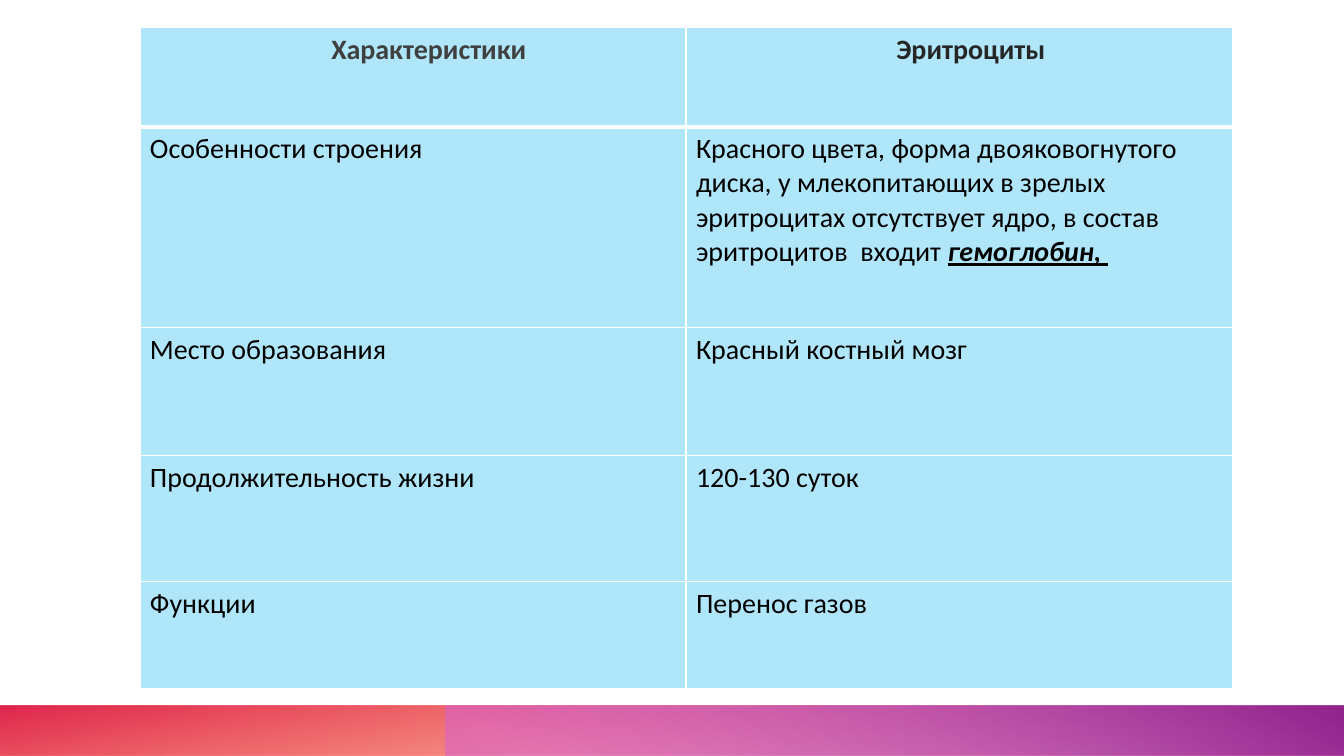
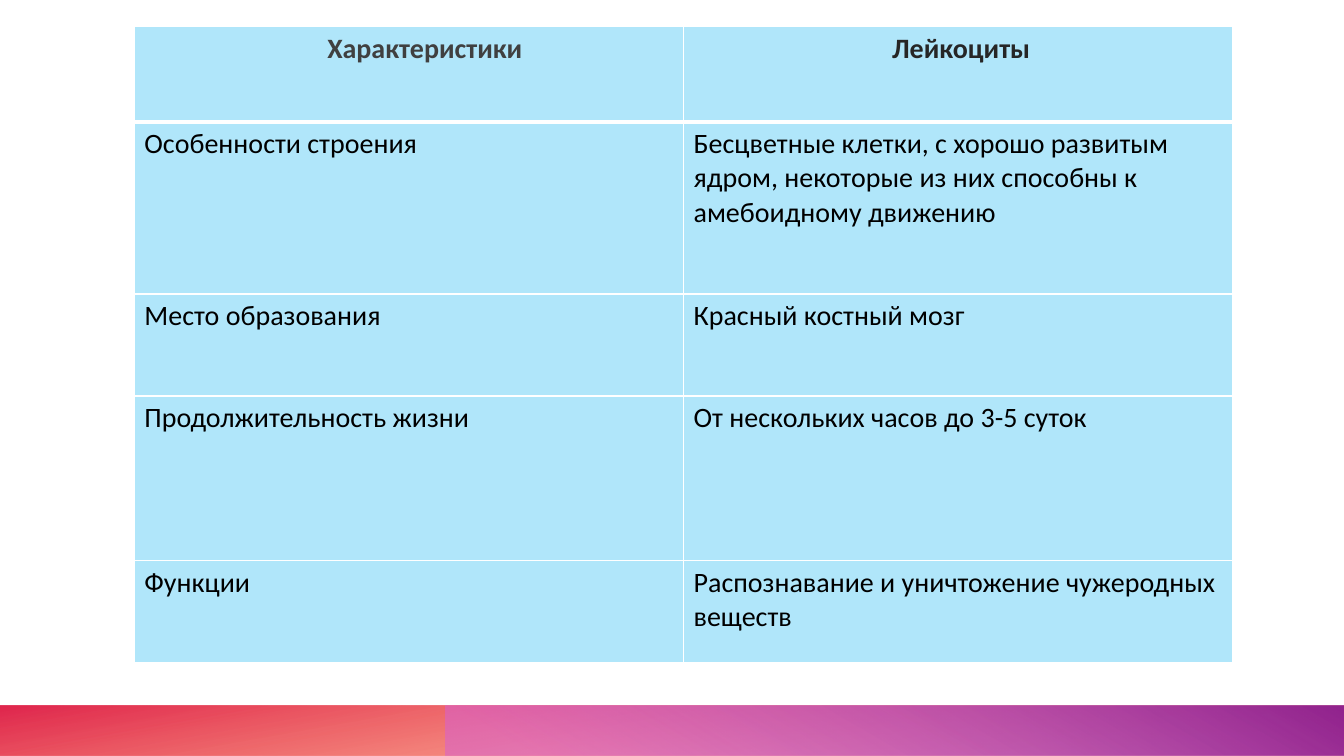
from dataclasses import dataclass

from lxml import etree
from pptx import Presentation
from pptx.dml.color import RGBColor
from pptx.enum.shapes import MSO_SHAPE
from pptx.enum.text import PP_ALIGN
from pptx.oxml.ns import qn
from pptx.util import Cm, Pt

RECT = MSO_SHAPE.RECTANGLE
LEFT, CENTER = PP_ALIGN.LEFT, PP_ALIGN.CENTER

COLORS = {
    "white": "FFFFFF",
    "black": "000000",
    "cell": "00B0F0",
    "head_left": "404040",
    "head_right": "262626",
    "orange": "FE4A00",
    "red": "DA002F",
    "pink": "D861D4",
    "purple": "92248E",
}
FONT = "Calibri"
TEXT_SIZE = 20
CELL_ALPHA = 31
THIN, THICK = 1, 3
SLIDE_W, SLIDE_H = 33.87, 19.05
BAND_H = 1.27
CELL_MARGIN = 0.25
LABELS = (
    "Особенности строения",
    "Место образования",
    "Продолжительность жизни",
    "Функции",
)


@dataclass(frozen=True)
class Stop:
    position: float
    color: str
    alpha: int


@dataclass(frozen=True)
class Band:
    left: float
    rotation: int
    angle: int
    stops: tuple[Stop, Stop]


@dataclass(frozen=True)
class CellTable:
    left: float
    top: float
    col_width: float
    row_heights: tuple[float, ...]
    title: str
    title_indent: float
    answers: tuple[str, ...]
    key_term: str = ""


BANDS = (
    Band(0, 180, 100, (Stop(0.14, "orange", 28), Stop(1, "red", 85))),
    Band(11.22, 0, 240, (Stop(0.09, "pink", 55), Stop(0.99, "purple", 100))),
)
TABLES = (
    CellTable(
        3.53, 0.69, 13.76, (2.51, 5.05, 3.23, 3.17, 2.69), "Эритроциты", 0.6,
        (
            "Красного цвета, форма двояковогнутого диска, у млекопитающих в зрелых "
            "эритроцитах отсутствует ядро, в состав эритроцитов  входит ",
            "Красный костный мозг",
            "120-130 суток",
            "Перенос газов",
        ),
        key_term="гемоглобин, ",
    ),
    CellTable(
        3.39, 0.67, 13.84, (2.4, 4.34, 2.57, 4.14, 2.58), "Лейкоциты", 0.15,
        (
            "Бесцветные клетки, с хорошо развитым ядром, некоторые из них способны "
            "к амебоидному движению",
            "Красный костный мозг",
            "От нескольких часов до 3-5 суток",
            "Распознавание и уничтожение чужеродных веществ",
        ),
    ),
)


def rgb(name: str) -> RGBColor:
    return RGBColor.from_string(COLORS[name])


def set_alpha(color, percent: int) -> None:
    etree.SubElement(color, qn("a:alpha")).set("val", str(percent * 1000))


def add_run(p, text: str, *, color: str = "black", bold: bool = False,
            italic: bool = False, underline: bool = False) -> None:
    r = p.add_run()
    r.text = text
    font = r.font
    font.name, font.size = FONT, Pt(TEXT_SIZE)
    font.bold, font.italic, font.underline = bold, italic, underline
    font.color.rgb = rgb(color)


def add_band(s, layout, band: Band, shape_id: int) -> None:
    sp = s.shapes.add_shape(RECT, Cm(band.left), Cm(SLIDE_H - BAND_H),
                            Cm(SLIDE_W - band.left), Cm(BAND_H))
    sp.shadow.inherit = False
    sp.line.fill.background()
    sp.rotation = band.rotation
    sp.element.spPr.find(qn("a:xfrm")).set("flipH", "1")
    sp.fill.gradient()
    sp.fill.gradient_angle = 360 - band.angle
    for grad, stop in zip(sp.fill.gradient_stops, band.stops):
        grad.position = stop.position
        grad.color.rgb = rgb(stop.color)
    for color, stop in zip(sp.element.spPr.iter(qn("a:srgbClr")), band.stops):
        set_alpha(color, stop.alpha)
    sp.element.nvSpPr.cNvPr.set("id", str(shape_id))
    layout.shapes.element.append(sp.element)


def set_borders(tc_pr, top: int, bottom: int) -> None:
    widths = {"a:lnL": THIN, "a:lnR": THIN, "a:lnT": top, "a:lnB": bottom}
    for i, (tag, width) in enumerate(widths.items()):
        ln = etree.Element(qn(tag), w=str(Pt(width)))
        fill = etree.SubElement(ln, qn("a:solidFill"))
        etree.SubElement(fill, qn("a:srgbClr"), val=COLORS["white"])
        tc_pr.insert(i, ln)


def format_cell(cell, row: int, indent: float) -> None:
    cell.margin_left = Cm(CELL_MARGIN + indent)
    cell.fill.solid()
    cell.fill.fore_color.rgb = rgb("cell")
    tc_pr = cell.fill.fore_color and cell._tc.tcPr
    set_alpha(next(tc_pr.iter(qn("a:srgbClr"))), CELL_ALPHA)
    set_borders(tc_pr, THICK if row == 1 else THIN, THICK if row == 0 else THIN)


def add_cell_table(s, spec_: CellTable) -> None:
    heights = spec_.row_heights
    frame = s.shapes.add_table(len(heights), 2, Cm(spec_.left), Cm(spec_.top),
                               Cm(2 * spec_.col_width), Cm(sum(heights)))
    table = frame.table
    table.first_row = table.horz_banding = False
    for col in table.columns:
        col.width = Cm(spec_.col_width)
    texts = (("Характеристики", spec_.title), *zip(LABELS, spec_.answers))
    indents = (0.8, spec_.title_indent)
    head_colors = ("head_left", "head_right")
    for i, (height, row_texts) in enumerate(zip(heights, texts)):
        table.rows[i].height = Cm(height)
        head = i == 0
        for j, text in enumerate(row_texts):
            cell = table.cell(i, j)
            format_cell(cell, i, indents[j] if head else 0)
            p = cell.text_frame.paragraphs[0]
            p.alignment = CENTER if head else LEFT
            add_run(p, text, color=head_colors[j] if head else "black", bold=head)
    if spec_.key_term:
        add_run(table.cell(1, 1).text_frame.paragraphs[0], spec_.key_term,
                bold=True, italic=True, underline=True)


def main() -> None:
    prs = Presentation()
    prs.slide_width, prs.slide_height = Cm(SLIDE_W), Cm(SLIDE_H)
    blank = prs.slide_layouts[6]
    slides = [prs.slides.add_slide(blank) for _ in TABLES]
    for shape_id, band in enumerate(BANDS, start=101):
        add_band(slides[0], blank, band, shape_id)
    for s, cell_table in zip(slides, TABLES):
        add_cell_table(s, cell_table)
    prs.save("out.pptx")


if __name__ == "__main__":
    main()
